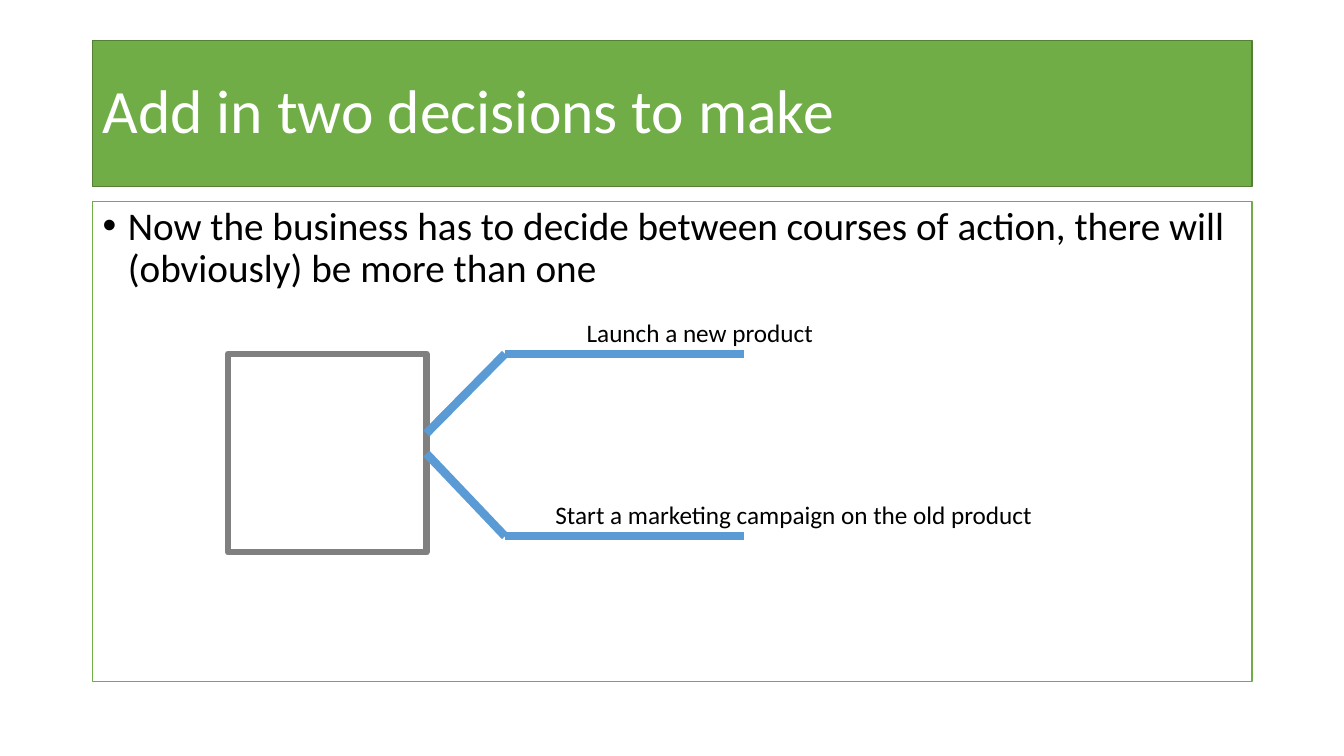
from pptx import Presentation, util as u
from pptx.dml.color import RGBColor
from pptx.enum import shapes, text
from pptx.oxml.ns import qn
from lxml import etree

theme = dict(font="Calibri", white="FFFFFF", black="000000", green="70AD47",
             dark="538035", grey="808080", blue="5B9BD5",
             head=44, body=28, label=18)

deck = Presentation()
deck.slide_width, deck.slide_height = u.Inches(13.33), u.Inches(7.5)
slide = deck.slides.add_slide(deck.slide_layouts[6])


def place(x, y, *size):
    """Percent of slide width and height, turned into slide units."""
    sides = (deck.slide_width, deck.slide_height) * 2
    return [round(sides[i] * v / 100) for i, v in enumerate((x, y, *size))]


def write(shape, words, size, color, **form):
    frame = shape.text_frame
    frame.text = words
    frame.word_wrap = True
    para = frame.paragraphs[0]
    para.alignment = text.PP_ALIGN.LEFT
    for key, val in dict(name=theme["font"], size=u.Pt(theme[size])).items():
        setattr(para.runs[0].font, key, val)
    para.runs[0].font.color.rgb = RGBColor.from_string(theme[color])
    for key, val in form.items():
        setattr(para if hasattr(para, key) else frame, key, val)
    return para


# Title bar, body panel and decision square
left, wide = 6.9, 86.27
boxes = []
for spot, fill, edge, width in (
        ((left, 5.33, wide, 19.33), "green", "dark", 1),
        ((left, 26.67, wide, 63.47), "white", "green", 1),
        ((16.95, 46.8, 14.78, 26.27), None, "grey", 4.5)):
    box = slide.shapes.add_shape(shapes.MSO_SHAPE.RECTANGLE, *place(*spot))
    box.shadow.inherit = False
    if fill:
        box.fill.solid()
        box.fill.fore_color.rgb = RGBColor.from_string(theme[fill])
    else:
        box.fill.background()
    box.line.color.rgb = RGBColor.from_string(theme[edge])
    box.line.width = u.Pt(width)
    boxes.append(box)

# Title and bullet
title, panel, square = boxes
write(title, "Add in two decisions to make", "head", "white", line_spacing=0.9,
      vertical_anchor=text.MSO_ANCHOR.MIDDLE)
point = write(panel, "Now the business has to decide between courses of action, "
              "there will (obviously) be more than one", "body", "black",
              line_spacing=0.9, space_before=u.Pt(10),
              vertical_anchor=text.MSO_ANCHOR.TOP)
props = point._p.get_or_add_pPr()
props.set("marL", str(u.Inches(0.25)))
props.set("indent", str(-u.Inches(0.25)))
etree.SubElement(props, qn("a:buFont")).set("typeface", "Arial")
etree.SubElement(props, qn("a:buChar")).set("char", "•")

# Branches: from the square to a bend, then level under a label
start, bend, end = 31.73, 37.58, 55.36
for root, level, words, x, width in (
        (57.33, 46.8, "Launch a new product", 42.91, 18.6),
        (60, 70.93, "Start a marketing campaign on the old product", 40.59, 37.43)):
    for a, b in (((start, root), (bend, level)), ((bend, level), (end, level))):
        line = slide.shapes.add_connector(shapes.MSO_CONNECTOR.STRAIGHT,
                                          *place(*a, *b))
        line.line.color.rgb = RGBColor.from_string(theme["blue"])
        line.line.width = u.Pt(6)
        etree.SubElement(line._element.spPr, qn("a:effectLst"))
    label = slide.shapes.add_textbox(*place(x, level - 5.5, width, 5.33))
    write(label, words, "label", "black", word_wrap=False,
          auto_size=text.MSO_AUTO_SIZE.SHAPE_TO_FIT_TEXT)

deck.save("out.pptx")
